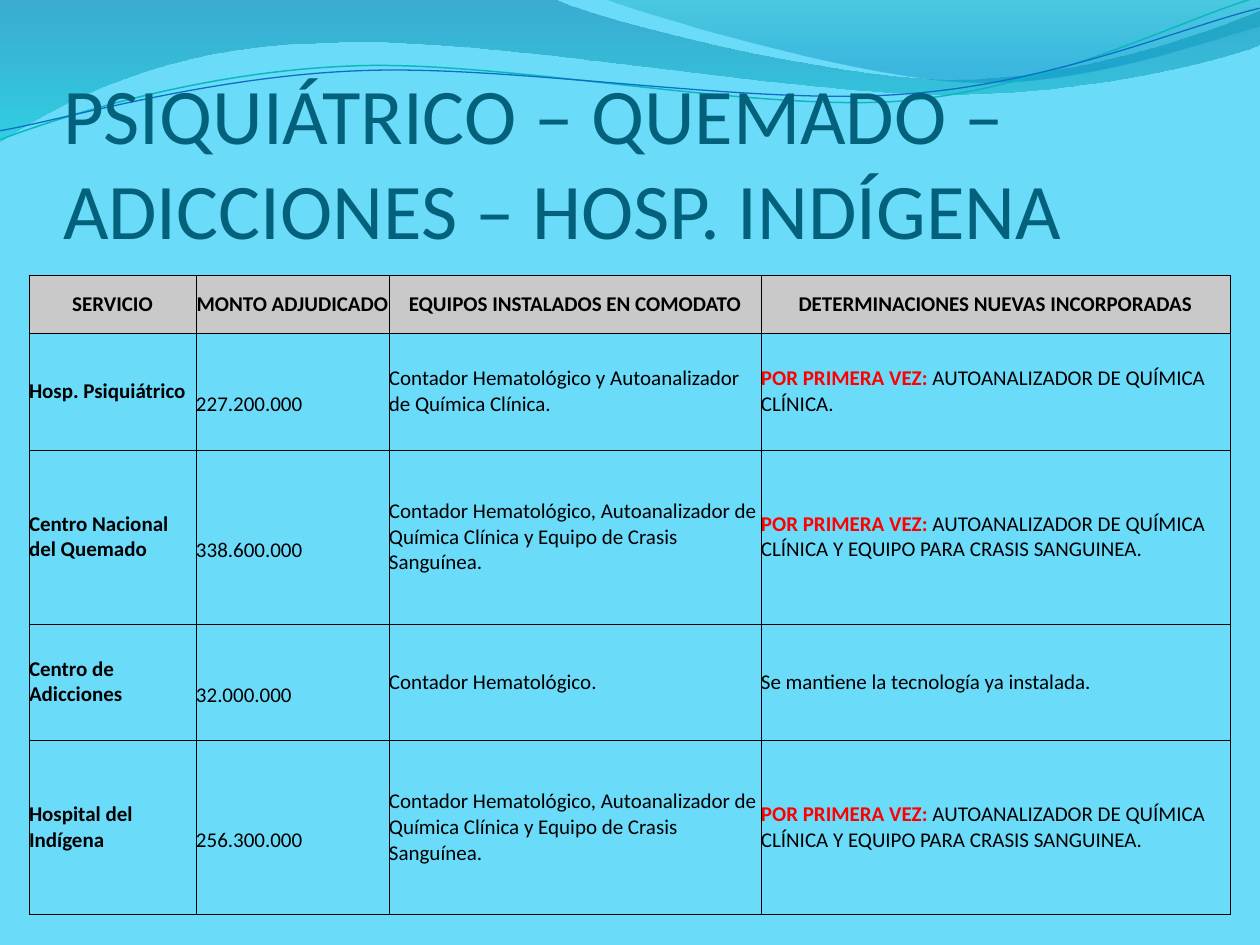
from lxml.etree import SubElement as Sub
from pptx import Presentation
from pptx.dml.color import RGBColor as Rgb
from pptx.enum.text import MSO_ANCHOR as Anchor, MSO_AUTO_SIZE as Auto, PP_ALIGN as Align
from pptx.oxml.ns import qn
from pptx.util import Emu, Pt

# Content
TITLE = "PSIQUIÁTRICO – QUEMADO – ADICCIONES – HOSP. INDÍGENA"
HEAD = ["SERVICIO", "MONTO ADJUDICADO", "EQUIPOS INSTALADOS EN COMODATO",
        "DETERMINACIONES NUEVAS INCORPORADAS"]
FIRST = "POR PRIMERA VEZ:"
FULL = "Contador Hematológico, Autoanalizador de Química Clínica y Equipo de Crasis Sanguínea."
CRASIS = FIRST + " AUTOANALIZADOR DE QUÍMICA CLÍNICA Y EQUIPO PARA CRASIS SANGUINEA."
ROWS = [
    ["Hosp. Psiquiátrico", "227.200.000",
     "Contador Hematológico y Autoanalizador de Química Clínica.",
     FIRST + " AUTOANALIZADOR DE QUÍMICA CLÍNICA."],
    ["Centro Nacional del Quemado", "338.600.000", FULL, CRASIS],
    ["Centro de Adicciones", "32.000.000", "Contador Hematológico.",
     "Se mantiene la tecnología ya instalada."],
    ["Hospital del Indígena", "256.300.000", FULL, CRASIS],
]
WIDTHS = [167, 193, 372, 469]
HEIGHTS = [58, 117, 174, 116, 175]
DROP = 26  # amounts sit one line lower

COLORS = {"back": "6BDBFA", "title": "04617B", "head": "C9C9C9", "text": "000000",
          "first": "FF0000", "teal": "0AB8BF", "blue": "0F6FC6"}
FONT = "Calibri"

# Waves: a start point, then steps of one point (line) or three (cubic curve)
# Gradient stops: position, colour, opacity in percent
BANDS = [
    ([[(0, 0)], [(554, -1)], [(600, 21), (837, 79), (955, 79)],
      [(1075, 79), (1207, 33), (1260, 11)], [(1261, 45)],
      [(1238, 55), (1096, 96), (940, 94)], [(784, 94), (481, 35), (324, 43)],
      [(163, 45), (58, 105), (-1, 142)], [(0, 0)]],
     [(0, "0074A1", 45), (1, "00C6CF", 55)]),
    ([[(604, -1)], [(641, 14), (859, 78), (969, 82)],
      [(1079, 87), (1211, 40), (1260, 26)], [(1260, 0)], [(604, -1)]],
     [(0, "00A1A9", 30), (0.8, "008BBF", 45)]),
]
LINES = [
    ([[(-2, 110)], [(59, 90), (199, 52), (350, 53)], [(499, 53), (745, 117), (896, 114)],
      [(1049, 109), (1184, 45), (1260, 27)]], "teal", 0.85),
    ([[(-2, 101)], [(57, 94), (207, 57), (357, 58)], [(509, 58), (750, 112), (902, 107)],
      [(1052, 104), (1187, 52), (1262, 38)]], "blue", 0.75),
]
TILT = 357.3


def px(n):
    return Emu(round(n * 914400 / 126))


def color(name):
    return Rgb.from_string(COLORS[name])


def wave(steps, close):
    """Lay all points as lines, then join each triple into one curve."""
    pts = [(px(x), px(y)) for step in steps for x, y in step]
    form = slide.shapes.build_freeform(*pts[0])
    form.add_line_segments(pts[1:], close=close)
    shape = form.convert_to_shape()
    shape.shadow.inherit = False
    segs = iter(list(shape.element.iter(qn("a:lnTo"))))
    for step in steps[1:]:
        group = [next(segs) for _ in step]
        if len(group) == 3:
            curve = group[0].makeelement(qn("a:cubicBezTo"))
            group[0].addprevious(curve)
            for seg in group:
                curve.append(seg[0])
                seg.getparent().remove(seg)
    # The waves belong to the master
    deck.slide_master.shapes.element.append(shape.element)
    return shape


def style(run, name, bold):
    run.font.name, run.font.size, run.font.bold = FONT, Pt(12), bold
    run.font.color.rgb = color(name)


def border(cell):
    props = cell._tc.get_or_add_tcPr()
    for i, side in enumerate(("lnL", "lnR", "lnT", "lnB")):
        line = props.makeelement(qn("a:" + side), {"w": str(Pt(0.5))})
        props.insert(i, line)
        Sub(Sub(line, qn("a:solidFill")), qn("a:srgbClr"), val=COLORS["text"])


def fill_cell(cell, text, row, col):
    cell.margin_left = cell.margin_right = cell.margin_bottom = 0
    cell.margin_top = px(DROP) if row and col == 1 else 0
    cell.vertical_anchor = Anchor.MIDDLE
    para = cell.text_frame.paragraphs[0]
    para.alignment = Align.LEFT if row else Align.CENTER
    if text.startswith(FIRST):
        run = para.add_run()
        run.text = FIRST
        style(run, "first", True)
        text = text[len(FIRST):]
    run = para.add_run()
    run.text = text
    style(run, "text", row == 0 or col == 0)
    if row:
        cell.fill.background()
    else:
        cell.fill.solid()
        cell.fill.fore_color.rgb = color("head")
    border(cell)


deck = Presentation()
deck.slide_width, deck.slide_height = px(1260), px(945)
slide = deck.slides.add_slide(deck.slide_layouts[5])
slide.background.fill.solid()
slide.background.fill.fore_color.rgb = color("back")

# Waves
for steps, stops in BANDS:
    band = wave(steps, True)
    band.line.fill.background()
    band.fill.gradient()
    band.fill.gradient_angle = 270
    for stop, (pos, tone, alpha) in zip(band.fill.gradient_stops, stops):
        stop.position = pos
        stop.color.rgb = Rgb.from_string(tone)
    for node, (pos, tone, alpha) in zip(band.element.iter(qn("a:srgbClr")), stops):
        Sub(node, qn("a:alpha"), val=str(alpha * 1000))
for steps, name, width in LINES:
    line = wave(steps, False)
    line.rotation = TILT
    line.fill.background()
    line.line.color.rgb = color(name)
    line.line.width = Pt(width)

# Title
title = slide.shapes.title
title.left, title.top, title.width, title.height = px(63), px(97), px(1134), px(158)
frame = title.text_frame
frame.text = TITLE
frame.auto_size, frame.word_wrap = Auto.NONE, True
frame.vertical_anchor = Anchor.BOTTOM
frame.margin_left = frame.margin_right = frame.margin_bottom = 0
frame.margin_top = px(6)
para = frame.paragraphs[0]
para.alignment = Align.LEFT
font = para.runs[0].font
font.name, font.size, font.color.rgb = FONT, Pt(45), color("title")

# Table
data = [HEAD] + ROWS
table = slide.shapes.add_table(len(data), len(HEAD), px(29), px(275),
                               px(sum(WIDTHS)), px(sum(HEIGHTS))).table
table.first_row = table.horz_banding = False
for col, width in zip(table.columns, WIDTHS):
    col.width = px(width)
for r, (texts, height) in enumerate(zip(data, HEIGHTS)):
    table.rows[r].height = px(height)
    for c, text in enumerate(texts):
        fill_cell(table.cell(r, c), text, r, c)

deck.save("out.pptx")
